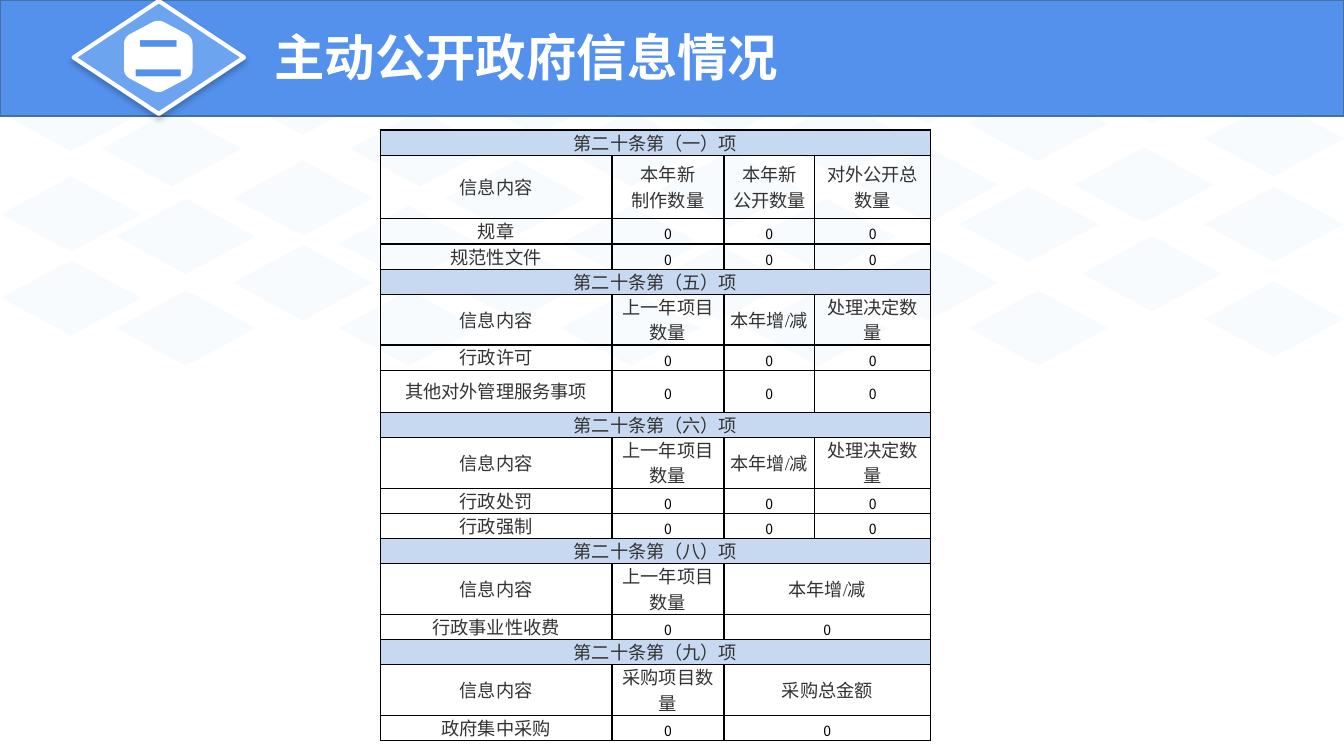
from lxml import etree
from pptx import Presentation
from pptx.dml.color import RGBColor
from pptx.enum.shapes import MSO_SHAPE as SHAPE
from pptx.enum.text import MSO_ANCHOR as ANCHOR, PP_ALIGN as ALIGN
from pptx.oxml import parse_xml
from pptx.oxml.ns import nsdecls, qn
from pptx.util import Inches, Pt

BLUE = RGBColor(0x53, 0x91, 0xED)
LIGHT_BLUE = RGBColor(0x6C, 0xA4, 0xF0)
BAND_EDGE = RGBColor(0x43, 0x73, 0x9E)
PALE_BLUE = RGBColor(0xDE, 0xEB, 0xF7)
TITLE_FILL = RGBColor(0xC6, 0xD9, 0xF1)
WHITE = RGBColor(0xFF, 0xFF, 0xFF)
GREY = RGBColor(0x33, 0x33, 0x33)
BLACK = RGBColor(0, 0, 0)
CJK_FONT = "Noto Sans CJK SC"

# Left edge of each column of background diamonds, with the tops in it
DIAMOND_COLUMNS = {
    11.94: [0.1, 1, 1.85, 2.79], 10.73: [0.48, 2.34], 10.65: [1.46],
    9.6: [0, 0.85, 2.88], 9.51: [1.85], 8.51: [0.48, 1.46, 2.43],
    7.64: [0, 1], 7.5: [1.97], 7.42: [2.88], 6.55: [0.59, 1.5],
    6.44: [2.43], 5.56: [1.1, 2.04, 2.88], 4.63: [0.59],
    4.42: [1.59, 2.43], 3.47: [1.1], 3.36: [2.04, 2.88],
    2.31: [0.59, 1.59, 2.43], 1.15: [1.97, 2.88], 1.01: [1.1],
    0.01: [0.75, 1.75, 2.58],
}
HEXAGON = [(1.57, 0.19), (1.91, 0.37), (1.91, 0.75),
           (1.57, 0.93), (1.23, 0.75), (1.23, 0.37)]

COLUMN_WIDTHS = [2.3, 1.11, 0.9, 1.15]
LINE_HEIGHT = 0.25
CHANGE_HEADERS = ["上一年项目数量", "本年增/减", "处理决定数量"]
# Title, header height, headers, then (item, row height) pairs
SECTIONS = [
    ("第二十条第（一）项", 0.63, ["本年新\n制作数量", "本年新\n公开数量", "对外公开总数量"],
     [("规章", LINE_HEIGHT), ("规范性文件", LINE_HEIGHT)]),
    ("第二十条第（五）项", 0.5, CHANGE_HEADERS,
     [("行政许可", LINE_HEIGHT), ("其他对外管理服务事项", 0.42)]),
    ("第二十条第（六）项", 0.5, CHANGE_HEADERS,
     [("行政处罚", LINE_HEIGHT), ("行政强制", LINE_HEIGHT)]),
    ("第二十条第（八）项", 0.5, CHANGE_HEADERS[:2], [("行政事业性收费", LINE_HEIGHT)]),
    ("第二十条第（九）项", 0.5, ["采购项目数量", "采购总金额"], [("政府集中采购", LINE_HEIGHT)]),
]


def add_run(p, text, size, font, color, bold=False):
    r = p.add_run()
    r.text = text
    r.font.size = Pt(size)
    r.font.name = font
    r.font.bold = bold
    r.font.color.rgb = color
    ea = etree.SubElement(r._r.get_or_add_rPr(), qn("a:ea"))
    ea.set("typeface", CJK_FONT)


def paint(sp, fill, line=None, width=1):
    sp.shadow.inherit = False
    sp.fill.solid()
    sp.fill.fore_color.rgb = fill
    if line is None:
        sp.line.fill.background()
    else:
        sp.line.color.rgb = line
        sp.line.width = Pt(width)


def add_preset(shapes, kind, left, top, width, height, fill, line=None, line_width=1):
    sp = shapes.add_shape(kind, Inches(left), Inches(top), Inches(width), Inches(height))
    paint(sp, fill, line, line_width)
    return sp


def add_background(shapes):
    group = shapes.add_group_shape()
    for left, tops in DIAMOND_COLUMNS.items():
        for top in tops:
            sp = add_preset(group.shapes, SHAPE.DIAMOND, left, top, 1.39, 0.75, PALE_BLUE)
            color = sp.fill._xPr.find(".//" + qn("a:srgbClr"))
            etree.SubElement(color, qn("a:alpha")).set("val", "20000")


def add_drop_shadow(sp):
    effects = sp._element.spPr.find(qn("a:effectLst"))
    effects.append(parse_xml(
        f'<a:outerShdw {nsdecls("a")} blurRad="{Pt(4)}" dist="{Pt(3)}" dir="5400000" '
        'algn="t" rotWithShape="0"><a:srgbClr val="000000"><a:alpha val="22000"/>'
        '</a:srgbClr></a:outerShdw>'))


def rounded_outline(corners, cut=0.07, steps=6):
    """Replace each corner by points on a quadratic curve that starts cut inches away."""
    points = []
    for i, (x, y) in enumerate(corners):
        ends = []
        for nx, ny in (corners[i - 1], corners[(i + 1) % len(corners)]):
            share = cut / ((nx - x) ** 2 + (ny - y) ** 2) ** 0.5
            ends.append((x + (nx - x) * share, y + (ny - y) * share))
        (ax, ay), (bx, by) = ends
        for step in range(steps + 1):
            t = step / steps
            u = 1 - t
            points.append((u * u * ax + 2 * u * t * x + t * t * bx,
                           u * u * ay + 2 * u * t * y + t * t * by))
    return points


def add_number_badge(shapes, number):
    diamond = add_preset(shapes, SHAPE.DIAMOND, 0.73, 0.01, 1.69, 1.12, LIGHT_BLUE, WHITE, 3)
    add_drop_shadow(diamond)
    points = [(Inches(x), Inches(y)) for x, y in rounded_outline(HEXAGON)]
    builder = shapes.build_freeform(*points[0])
    builder.add_line_segments(points[1:], close=True)
    hexagon = builder.convert_to_shape()
    paint(hexagon, WHITE)
    tf = hexagon.text_frame
    tf.margin_left = tf.margin_right = 0
    tf.vertical_anchor = ANCHOR.MIDDLE
    p = tf.paragraphs[0]
    p.alignment = ALIGN.CENTER
    add_run(p, number, 36, "Arial Narrow", BLUE, bold=True)


def add_heading(shapes, text):
    tf = shapes.add_textbox(Inches(2.72), Inches(0.21), Inches(5.68), Inches(0.71)).text_frame
    tf.word_wrap = True
    tf.margin_left = tf.margin_right = 0
    add_run(tf.paragraphs[0], text, 36, "Arial", WHITE, bold=True)


def add_borders(cell):
    tc_pr = cell._tc.get_or_add_tcPr()
    for i, side in enumerate(("lnL", "lnR", "lnT", "lnB")):
        tc_pr.insert(i, parse_xml(
            f'<a:{side} {nsdecls("a")} w="{Pt(1)}"><a:solidFill>'
            f'<a:srgbClr val="{BLACK}"/></a:solidFill></a:{side}>'))


def write_cell(cell, text):
    cell.vertical_anchor = ANCHOR.MIDDLE
    tf = cell.text_frame
    for i, line in enumerate(text.split("\n")):
        p = tf.add_paragraph() if i else tf.paragraphs[0]
        p.alignment = ALIGN.CENTER
        p.line_spacing = Pt(18)
        if line == "0":
            add_run(p, line, 10, CJK_FONT, BLACK)
        else:
            add_run(p, line, 13, "Times New Roman", GREY)


def add_disclosure_table(shapes):
    rows = []
    for title, header_height, headers, items in SECTIONS:
        rows.append((LINE_HEIGHT, [title]))
        rows.append((header_height, ["信息内容"] + headers))
        rows += [(height, [item] + ["0"] * len(headers)) for item, height in items]
    columns = len(COLUMN_WIDTHS)
    table = shapes.add_table(len(rows), columns, Inches(3.77), Inches(1.29),
                             Inches(sum(COLUMN_WIDTHS)),
                             Inches(sum(height for height, _ in rows))).table
    table.first_row = table.horz_banding = False
    for column, width in zip(table.columns, COLUMN_WIDTHS):
        column.width = Inches(width)
    for r, (height, texts) in enumerate(rows):
        table.rows[r].height = Inches(height)
        for cell in table.rows[r].cells:
            cell.margin_left = cell.margin_right = Inches(0.06)
            cell.margin_top = cell.margin_bottom = 0
            if len(texts) == 1:
                cell.fill.solid()
                cell.fill.fore_color.rgb = TITLE_FILL
            else:
                cell.fill.background()
            add_borders(cell)
        if len(texts) < columns:  # the last text spans the remaining columns
            table.cell(r, len(texts) - 1).merge(table.cell(r, columns - 1))
        for c, text in enumerate(texts):
            write_cell(table.cell(r, c), text)


def main():
    prs = Presentation()
    prs.slide_width, prs.slide_height = Inches(13.33), Inches(7.5)
    shapes = prs.slides.add_slide(prs.slide_layouts[6]).shapes
    add_background(shapes)
    add_preset(shapes, SHAPE.RECTANGLE, 0, 0, 13.33, 1.15, BLUE, BAND_EDGE)
    add_number_badge(shapes, "二")
    add_heading(shapes, "主动公开政府信息情况")
    add_disclosure_table(shapes)
    prs.save("out.pptx")


if __name__ == "__main__":
    main()
